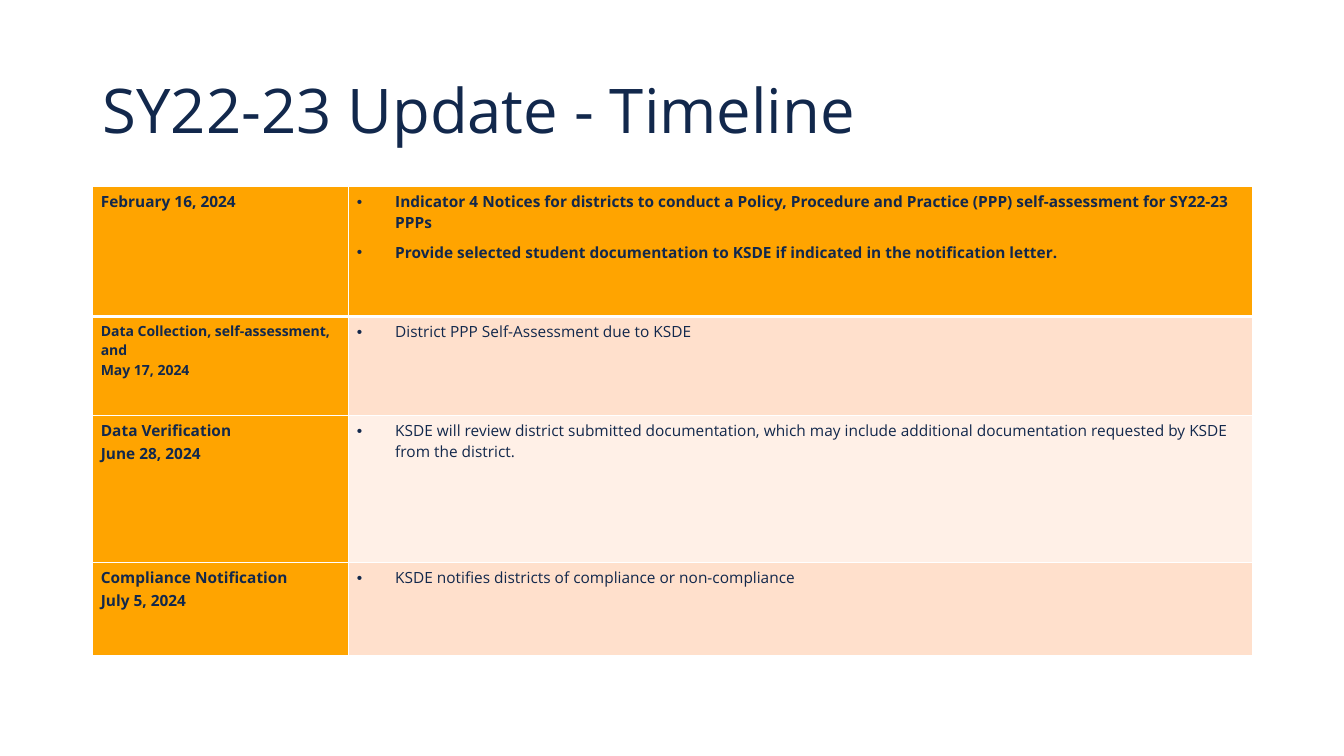
from dataclasses import dataclass

from lxml import etree
from pptx import Presentation
from pptx.dml.color import RGBColor
from pptx.enum import text
from pptx.oxml import ns
from pptx.util import Inches, Pt

COLORS = {"navy": "12284C", "orange": "FFA400", "peach": "FFE0CC",
          "cream": "FFF0E7", "white": "FFFFFF"}
FONT = "Open Sans"
HANGING = Inches(0.38)


@dataclass
class Line:
    words: str
    size: float = 11
    bold: bool = False
    bullet: bool = False
    spacing: float | None = None
    after: float = 0


@dataclass
class Stage:
    height: float
    when: list[Line]
    tasks: list[Line]
    tint: str


def stage_label(name: str, date: str, size: float = 11) -> list[Line]:
    return [Line(name, size, bold=True), Line(date, size, bold=True, spacing=1.07)]


def task(words: str, bold: bool = False, after: float = 0) -> Line:
    return Line(words, bold=bold, bullet=True, after=after)


STAGES = [
    Stage(1.29, [Line("February 16, 2024", bold=True, after=6)],
          [task("Indicator 4 Notices for districts to conduct a Policy, Procedure and "
                "Practice (PPP) self-assessment for SY22-23 PPPs", bold=True, after=6),
           task("Provide selected student documentation to KSDE if indicated in the "
                "notification letter.", bold=True)], "orange"),
    Stage(0.98, stage_label("Data Collection, self-assessment, and", "May 17, 2024", 10),
          [task("District PPP Self-Assessment due to KSDE")], "peach"),
    Stage(1.46, stage_label("Data Verification", "June 28, 2024"),
          [task("KSDE will review district submitted documentation, which may include "
                "additional documentation requested by KSDE from the district.")], "cream"),
    Stage(0.92, stage_label("Compliance Notification", "July 5, 2024"),
          [task("KSDE notifies districts of compliance or non-compliance", after=6)], "peach"),
]


def write_lines(frame, lines: list[Line]) -> None:
    for index, line in enumerate(lines):
        paragraph = frame.add_paragraph() if index else frame.paragraphs[0]
        if line.bullet:
            props = paragraph._p.get_or_add_pPr()
            props.set("marL", str(HANGING))
            props.set("indent", str(-HANGING))
            etree.SubElement(props, ns.qn("a:buFont"), typeface="Arial")
            etree.SubElement(props, ns.qn("a:buChar"), char="•")
        if line.spacing:
            paragraph.line_spacing = line.spacing
        if line.after:
            paragraph.space_after = Pt(line.after)
        run = paragraph.add_run()
        run.text = line.words
        run.font.name = FONT
        run.font.size = Pt(line.size)
        run.font.bold = line.bold
        run.font.color.rgb = RGBColor.from_string(COLORS["navy"])


def set_borders(cell, top: float, bottom: float) -> None:
    props = cell._tc.get_or_add_tcPr()
    for side, width in {"L": 1, "R": 1, "T": top, "B": bottom}.items():
        border = etree.SubElement(props, ns.qn(f"a:ln{side}"), w=str(Pt(width)))
        fill = etree.SubElement(border, ns.qn("a:solidFill"))
        etree.SubElement(fill, ns.qn("a:srgbClr"), val=COLORS["white"])


def fill_cell(cell, lines: list[Line], tint: str, row: int) -> None:
    cell.margin_left = cell.margin_right = Inches(0.08)
    cell.margin_top = cell.margin_bottom = Inches(0.05)
    # A heavier rule separates the first row from the rest
    set_borders(cell, top=3 if row == 1 else 1, bottom=3 if row == 0 else 1)
    cell.fill.solid()
    cell.fill.fore_color.rgb = RGBColor.from_string(COLORS[tint])
    write_lines(cell.text_frame, lines)


def add_title(slide) -> None:
    title = slide.shapes.add_textbox(Inches(0.92), Inches(0.4), Inches(11.5), Inches(1.45))
    frame = title.text_frame
    frame.word_wrap = True
    frame.vertical_anchor = text.MSO_ANCHOR.MIDDLE
    write_lines(frame, [Line("SY22-23 Update - Timeline", 44, spacing=0.9)])


def add_timeline(slide) -> None:
    height = sum(stage.height for stage in STAGES)
    timeline = slide.shapes.add_table(len(STAGES), 2, Inches(0.92), Inches(1.85),
                                      Inches(11.5), Inches(height)).table
    for column, width in zip(timeline.columns, (2.54, 8.96)):
        column.width = Inches(width)
    for row, stage in enumerate(STAGES):
        timeline.rows[row].height = Inches(stage.height)
        fill_cell(timeline.cell(row, 0), stage.when, "orange", row)
        fill_cell(timeline.cell(row, 1), stage.tasks, stage.tint, row)


def main() -> None:
    deck = Presentation()
    deck.slide_width, deck.slide_height = Inches(13.33), Inches(7.5)
    slide = deck.slides.add_slide(deck.slide_layouts[6])
    add_title(slide)
    add_timeline(slide)
    deck.save("out.pptx")


if __name__ == "__main__":
    main()
